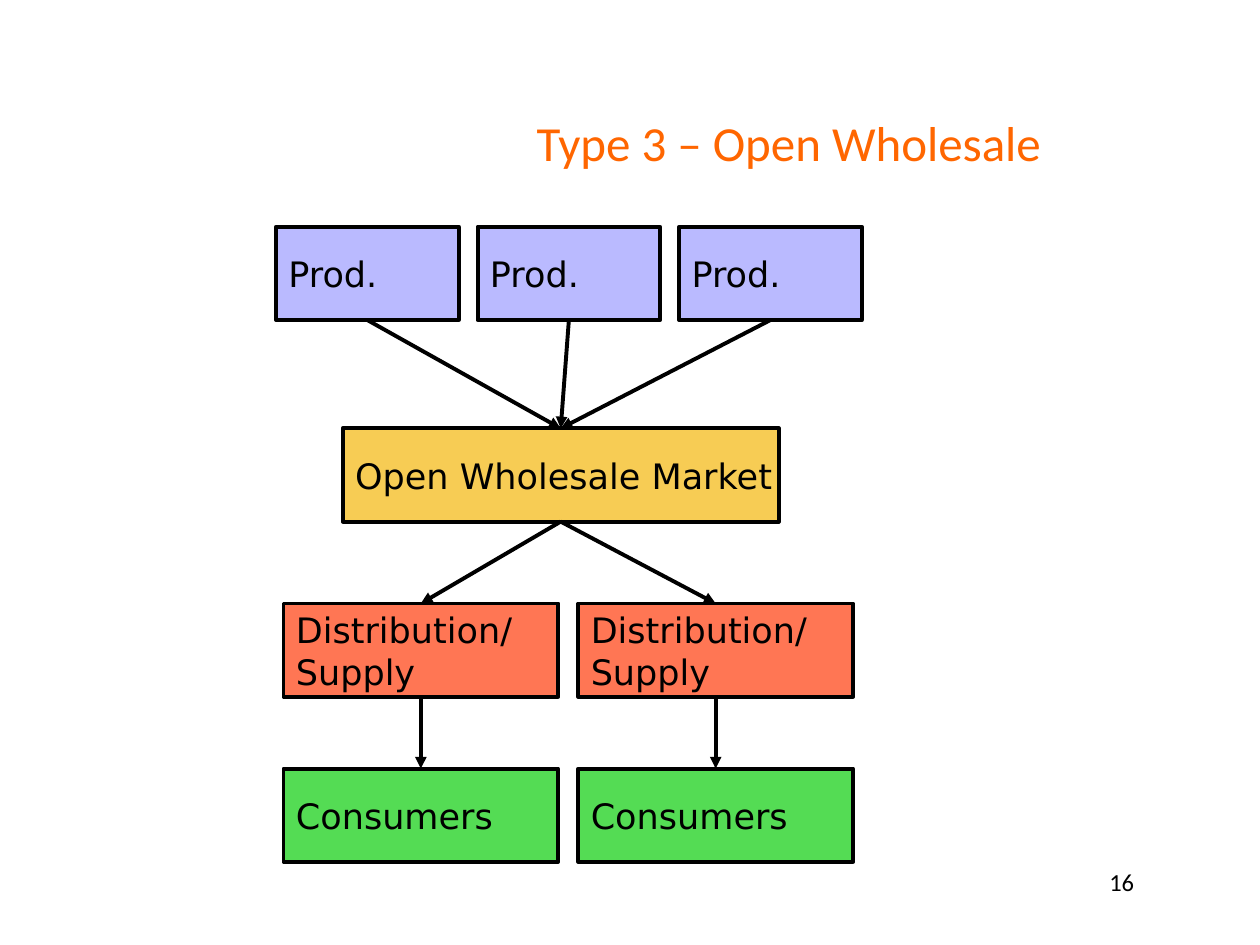
from lxml.etree import SubElement
from pptx import Presentation
from pptx.dml.color import RGBColor
from pptx.enum.shapes import MSO_CONNECTOR, MSO_SHAPE
from pptx.enum.text import MSO_ANCHOR, PP_ALIGN
from pptx.oxml.ns import qn
from pptx.util import Inches, Pt

BLACK = RGBColor(0x00, 0x00, 0x00)
ORANGE = RGBColor(0xFF, 0x66, 0x00)
BLUE = RGBColor(0x99, 0x99, 0xFF)
GOLD = RGBColor(0xF4, 0xB4, 0x00)
RED = RGBColor(0xFF, 0x33, 0x00)
GREEN = RGBColor(0x00, 0xCC, 0x00)
HIGH = 0.74

deck = Presentation()
deck.slide_width, deck.slide_height = Inches(10), Inches(7.5)
slide = deck.slides.add_slide(deck.slide_layouts[5])
shapes = slide.shapes


def write(frame, text, font, size, color, align):
    frame.word_wrap = True
    frame.text = text
    for para in frame.paragraphs:
        para.alignment = align
        for run in para.runs:
            run.font.name = font
            run.font.size = Pt(size)
            run.font.color.rgb = color


title = shapes.title
title.left, title.top = Inches(3.35), Inches(0.84)
title.width, title.height = Inches(5.82), Inches(0.98)
title.text_frame.vertical_anchor = MSO_ANCHOR.TOP
write(title.text_frame, "Type 3 – Open Wholesale", "Calibri", 28, ORANGE, PP_ALIGN.CENTER)

number = shapes.add_textbox(Inches(7.17), Inches(6.83), Inches(1.93), Inches(0.52))
write(number.text_frame, "16", "Calibri", 14, BLACK, PP_ALIGN.RIGHT)

rows = [
    ("Prod.", BLUE, 1.8, 1.45, [2.19 + 1.6 * i for i in range(3)]),
    ("Open Wholesale Market", GOLD, 3.4, 3.46, [2.72]),
    ("Distribution/\vSupply", RED, 4.79, 2.18, [2.25, 4.59]),
    ("Consumers", GREEN, 6.1, 2.18, [2.25, 4.59]),
]
grid = []
for text, color, top, wide, lefts in rows:
    line = []
    for left in lefts:
        box = shapes.add_shape(
            MSO_SHAPE.RECTANGLE, Inches(left), Inches(top), Inches(wide), Inches(HIGH))
        box.shadow.inherit = False
        box.fill.solid()
        box.fill.fore_color.rgb = color
        tint = box.fill._xPr.find(".//" + qn("a:srgbClr"))
        SubElement(tint, qn("a:alpha"), val="67000")
        box.line.color.rgb = BLACK
        box.line.width = Pt(2.25)
        frame = box.text_frame
        frame.margin_right = 0
        frame.vertical_anchor = MSO_ANCHOR.MIDDLE
        write(frame, text, "DejaVu Sans", 20, BLACK, PP_ALIGN.LEFT)
        line.append(box)
    grid.append(line)

prods, (market,), supplies, users = grid
links = [(prod, market) for prod in prods]
links += [(market, supply) for supply in supplies]
links += zip(supplies, users)
for start, end in links:
    arrow = shapes.add_connector(
        MSO_CONNECTOR.STRAIGHT,
        start.left + start.width // 2, start.top + start.height,
        end.left + end.width // 2, end.top)
    arrow.line.color.rgb = BLACK
    arrow.line.width = Pt(2.25)
    SubElement(arrow.line._get_or_add_ln(), qn("a:tailEnd"), type="triangle")
    SubElement(arrow._element.spPr, qn("a:effectLst"))

deck.save("out.pptx")
